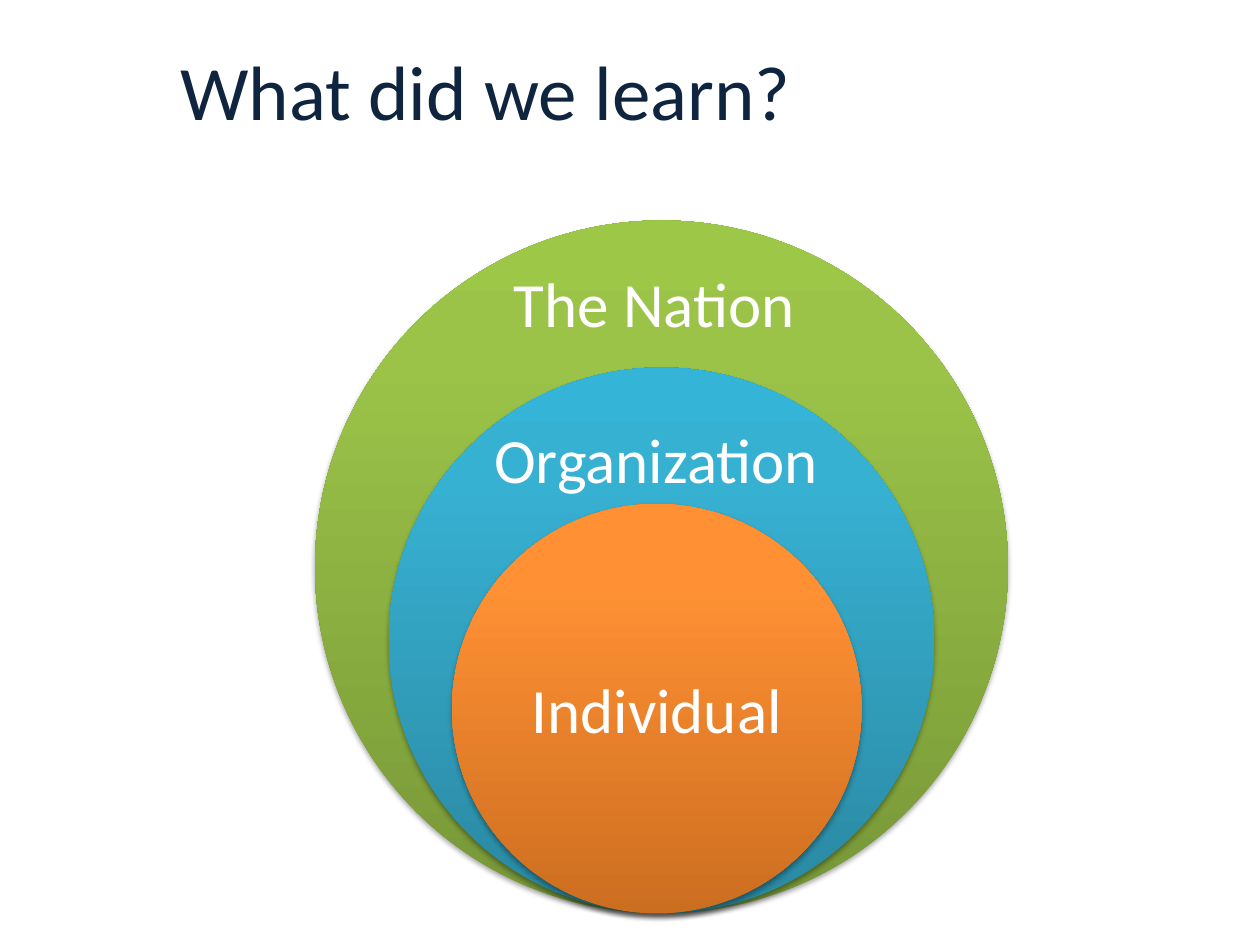
from pptx import Presentation
from pptx.dml.color import RGBColor
from pptx.enum.shapes import MSO_SHAPE
from pptx.enum.text import MSO_ANCHOR, PP_ALIGN
from pptx.oxml import parse_xml
from pptx.oxml.ns import nsdecls
from pptx.util import Pt

COLORS = {
    "title": "0F243E",
    "label": "FFFFFF",
    "shadow": "000000",
    "nation": ("779737", "9BC348", "9DC746"),
    "organization": ("2A88A2", "37B1D2", "34B4D6"),
    "individual": ("CC6E20", "FF9034", "FF9136"),
}
STOPS = (0, 80, 100)


def write_text(sp, text, size, color, align, anchor):
    """Fill a shape with one run of Calibri text."""
    tf = sp.text_frame
    tf.word_wrap = True
    tf.vertical_anchor = anchor
    p = tf.paragraphs[0]
    p.alignment = align
    r = p.add_run()
    r.text = text
    r.font.name = "Calibri"
    r.font.size = Pt(size)
    r.font.color.rgb = RGBColor.from_string(COLORS[color])


def add_title(shapes, left, top, width, height, text):
    """Place the slide title in its box."""
    sp = shapes.add_textbox(Pt(left), Pt(top), Pt(width), Pt(height))
    write_text(sp, text, 44, "title", PP_ALIGN.LEFT, MSO_ANCHOR.MIDDLE)


def add_circle(shapes, left, top, size, color):
    """Draw a circle with an upward gradient and a soft shadow below."""
    sp = shapes.add_shape(MSO_SHAPE.OVAL, Pt(left), Pt(top), Pt(size), Pt(size))
    sp.line.fill.background()
    stops = "".join(
        f'<a:gs pos="{pos * 1000}"><a:srgbClr val="{value}"/></a:gs>'
        for pos, value in zip(STOPS, COLORS[color])
    )
    spPr = sp._element.spPr
    spPr[-1].addprevious(parse_xml(
        f'<a:gradFill {nsdecls("a")} rotWithShape="1"><a:gsLst>{stops}</a:gsLst>'
        '<a:lin ang="16200000" scaled="0"/></a:gradFill>'
    ))
    spPr.append(parse_xml(
        f'<a:effectLst {nsdecls("a")}><a:outerShdw blurRad="{Pt(3.1)}" '
        f'dist="{Pt(1.8)}" dir="5400000" rotWithShape="0">'
        f'<a:srgbClr val="{COLORS["shadow"]}"><a:alpha val="35000"/></a:srgbClr>'
        '</a:outerShdw></a:effectLst>'
    ))
    return sp


def add_ring(shapes, left, top, size, color, text, dx, dy):
    """Group a circle with a label offset from the circle's corner."""
    group = shapes.add_group_shape()
    add_circle(group.shapes, left, top, size, color)
    sp = group.shapes.add_textbox(Pt(left + dx), Pt(top + dy), Pt(282), Pt(51))
    write_text(sp, text, 36, "label", PP_ALIGN.CENTER, MSO_ANCHOR.TOP)


def add_nested_circles(shapes, left, top):
    """Stack the three levels so that they meet at the bottom."""
    add_ring(shapes, left, top, 396, "nation", "The Nation ", 57, 21.6)
    add_ring(shapes, left + 42, top + 84, 312, "organization", "Organization", 12, 27)
    sp = add_circle(shapes, left + 78.3, top + 162, 234, "individual")
    write_text(sp, "Individual", 36, "label", PP_ALIGN.CENTER, MSO_ANCHOR.MIDDLE)


def main():
    """Build the slide and save it."""
    prs = Presentation()
    prs.slide_width, prs.slide_height = Pt(720), Pt(540)
    s = prs.slides.add_slide(prs.slide_layouts[6])
    add_title(s.shapes, 96, 6, 624, 90, "What did we learn?")
    add_nested_circles(s.shapes, 180, 126)
    prs.save("out.pptx")


if __name__ == "__main__":
    main()
